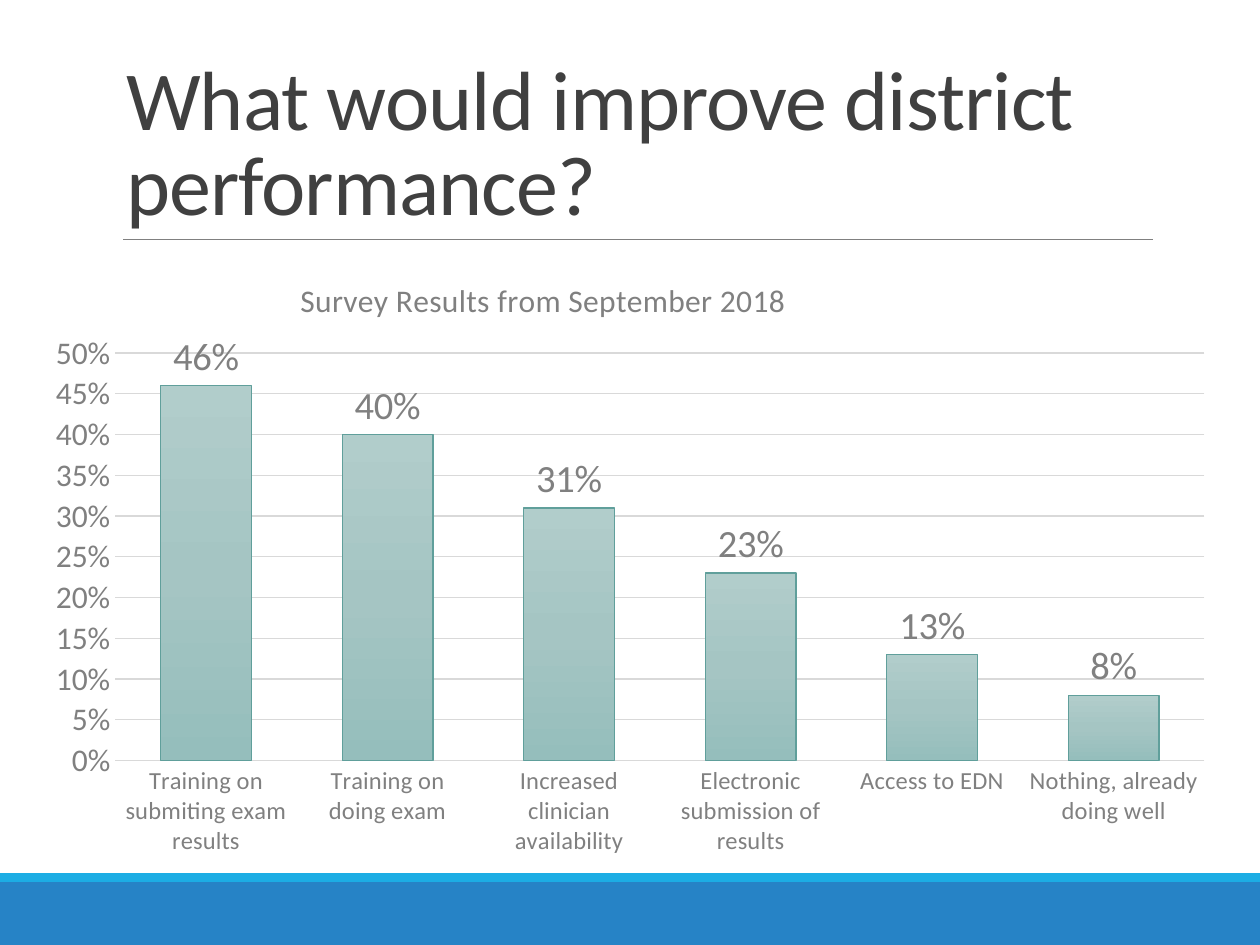
"""Build a survey results slide with a title and a column chart."""
from copy import deepcopy
from dataclasses import dataclass
from typing import Any

from lxml import etree
from pptx import Presentation
from pptx.chart.chart import Chart
from pptx.chart.data import CategoryChartData
from pptx.dml.color import RGBColor
from pptx.enum.chart import XL_CHART_TYPE, XL_LABEL_POSITION, XL_TICK_MARK
from pptx.enum.shapes import MSO_CONNECTOR, MSO_SHAPE
from pptx.enum.text import MSO_ANCHOR, MSO_AUTO_SIZE, PP_ALIGN
from pptx.oxml import parse_xml
from pptx.oxml.ns import nsdecls, qn
from pptx.slide import Slide
from pptx.util import Pt

COLUMN = XL_CHART_TYPE.COLUMN_CLUSTERED
OUTSIDE_END = XL_LABEL_POSITION.OUTSIDE_END
NO_TICK = XL_TICK_MARK.NONE
STRAIGHT = MSO_CONNECTOR.STRAIGHT
RECTANGLE = MSO_SHAPE.RECTANGLE
BOTTOM = MSO_ANCHOR.BOTTOM
NO_AUTOFIT = MSO_AUTO_SIZE.NONE
LEFT = PP_ALIGN.LEFT


@dataclass(frozen=True)
class Theme:
    """Fonts, colours and type sizes."""
    font: str = "Calibri"
    title: str = "404040"
    muted: str = "808080"
    grid: str = "D9D9D9"
    bar_line: str = "609F9B"
    bar_stops: tuple = ((0, "B1CDCB"), (0.5, "A5C5C3"), (1, "95BEBC"))
    title_size: float = 48
    heading_size: float = 18
    value_size: float = 18
    category_size: float = 14
    label_size: float = 22


@dataclass(frozen=True)
class Band:
    """A full-width footer band."""
    top: float
    height: float
    color: str


@dataclass(frozen=True)
class Answer:
    """A survey answer and its share."""
    name: str
    share: float


THEME = Theme()
WIDTH, HEIGHT = 720, 540
BANDS = (Band(504, 36, "2683C6"), Band(499, 5, "1CADE4"))
ANSWERS = (
    Answer("Training on submiting exam results", 0.46),
    Answer("Training on doing exam", 0.40),
    Answer("Increased clinician availability", 0.31),
    Answer("Electronic submission of results", 0.23),
    Answer("Access to EDN", 0.13),
    Answer("Nothing, already doing well", 0.08),
)


def apply_format(target: Any, values: dict[str, Any]) -> None:
    """Set each named attribute on the target."""
    for name, value in values.items():
        setattr(target, name, value)


def format_font(font: Any, size: float, color: str) -> None:
    """Apply the theme font with a size and colour."""
    apply_format(font, {"name": THEME.font, "size": Pt(size), "bold": False})
    font.color.rgb = RGBColor.from_string(color)


def format_line(line: Any, width: float, color: str) -> None:
    """Apply a width and colour to a line."""
    line.width = Pt(width)
    line.color.rgb = RGBColor.from_string(color)


def draw_band(slide: Slide, band: Band) -> None:
    """Draw one footer band."""
    shape = slide.shapes.add_shape(RECTANGLE, 0, Pt(band.top), Pt(WIDTH), Pt(band.height))
    shape.shadow.inherit = False
    shape.fill.solid()
    shape.fill.fore_color.rgb = RGBColor.from_string(band.color)
    shape.line.fill.background()


def draw_rule(slide: Slide) -> None:
    """Draw the thin rule under the title."""
    rule = slide.shapes.add_connector(STRAIGHT, Pt(70.5), Pt(136.8), Pt(658.8), Pt(136.8))
    format_line(rule.line, 0.5, THEME.muted)
    etree.SubElement(rule._element.spPr, qn("a:effectLst"))


def draw_title(slide: Slide, text: str) -> None:
    """Fill and place the title placeholder."""
    title = slide.shapes.title
    apply_format(title, {"left": Pt(64.8), "top": Pt(22.3), "width": Pt(594), "height": Pt(114.5)})
    frame = title.text_frame
    apply_format(frame, {"text": text, "word_wrap": True, "auto_size": NO_AUTOFIT,
                         "vertical_anchor": BOTTOM})
    paragraph = frame.paragraphs[0]
    apply_format(paragraph, {"alignment": LEFT, "line_spacing": 0.85})
    run = paragraph.runs[0]
    format_font(run.font, THEME.title_size, THEME.title)
    run.font._element.set("spc", "-50")


def place(element: Any, **fractions: float) -> None:
    """Give a chart part a manual layout in chart fractions."""
    for layout in element.findall(qn("c:layout")):
        element.remove(layout)
    target = '<c:layoutTarget val="inner"/>' if "w" in fractions else ""
    modes = "".join(f'<c:{axis}Mode val="edge"/>' for axis in "xy")
    values = "".join(f'<c:{name} val="{value}"/>' for name, value in fractions.items())
    layout = parse_xml(f'<c:layout {nsdecls("c")}><c:manualLayout>{target}{modes}{values}'
                       '</c:manualLayout></c:layout>')
    text = element.find(qn("c:tx"))
    element.insert(0 if text is None else 1, layout)


def format_heading(chart: Chart, text: str) -> None:
    """Write and place the chart heading."""
    chart.has_title = True
    heading = chart.chart_title
    heading.text_frame.text = text
    run = heading.text_frame.paragraphs[0].runs[0]
    format_font(run.font, THEME.heading_size, THEME.muted)
    run.font._element.set("spc", "20")
    heading.include_in_layout = False
    place(heading._element, x=0.22, y=0.03)


def format_axes(chart: Chart) -> None:
    """Style both axes and the gridlines."""
    sizes = ((chart.category_axis, THEME.category_size), (chart.value_axis, THEME.value_size))
    for axis, size in sizes:
        apply_format(axis, {"major_tick_mark": NO_TICK, "minor_tick_mark": NO_TICK})
        format_font(axis.tick_labels.font, size, THEME.muted)
    format_line(chart.category_axis.format.line, 0.75, THEME.grid)
    value_axis = chart.value_axis
    apply_format(value_axis, {"minimum_scale": 0, "maximum_scale": 0.5, "major_unit": 0.05,
                              "has_major_gridlines": True})
    apply_format(value_axis.tick_labels, {"number_format": "0%", "number_format_is_linked": False})
    value_axis.format.line.fill.background()
    format_line(value_axis.major_gridlines.format.line, 0.75, THEME.grid)


def format_bars(chart: Chart) -> None:
    """Style the bars and their value labels."""
    plot = chart.plots[0]
    apply_format(plot, {"gap_width": 100, "overlap": -24, "vary_by_categories": False,
                        "has_data_labels": True})
    labels = plot.data_labels
    apply_format(labels, {"show_value": True, "position": OUTSIDE_END, "number_format": "0%",
                          "number_format_is_linked": False})
    format_font(labels.font, THEME.label_size, THEME.muted)
    series = plot.series[0]
    fill = series.format.fill
    fill.gradient()
    fill.gradient_angle = 270
    stop_list = series._element.xpath(".//a:gsLst")[0]
    stop_list.insert(1, deepcopy(stop_list[0]))
    for stop, (position, color) in zip(fill.gradient_stops, THEME.bar_stops):
        stop.position = position
        stop.color.rgb = RGBColor.from_string(color)
    format_line(series.format.line, 0.75, THEME.bar_line)


def draw_chart(slide: Slide, heading: str, answers: tuple[Answer, ...]) -> None:
    """Draw the column chart of the answers."""
    data = CategoryChartData(number_format="0%")
    data.categories = [answer.name for answer in answers]
    data.add_series("Series 1", [answer.share for answer in answers])
    chart = slide.shapes.add_chart(COLUMN, Pt(18), Pt(145.4), Pt(684), Pt(352.8), data).chart
    chart.has_legend = False
    format_font(chart.font, 10, "000000")
    format_heading(chart, heading)
    format_axes(chart)
    format_bars(chart)
    place(chart._chartSpace.chart.plotArea, x=0.07, y=0.16, w=0.91, h=0.66)


def main() -> None:
    """Build and save the presentation."""
    presentation = Presentation()
    apply_format(presentation, {"slide_width": Pt(WIDTH), "slide_height": Pt(HEIGHT)})
    slide = presentation.slides.add_slide(presentation.slide_layouts[5])
    for band in BANDS:
        draw_band(slide, band)
    draw_rule(slide)
    draw_title(slide, "What would improve district performance?")
    draw_chart(slide, "Survey Results from September 2018", ANSWERS)
    presentation.save("out.pptx")


if __name__ == "__main__":
    main()
